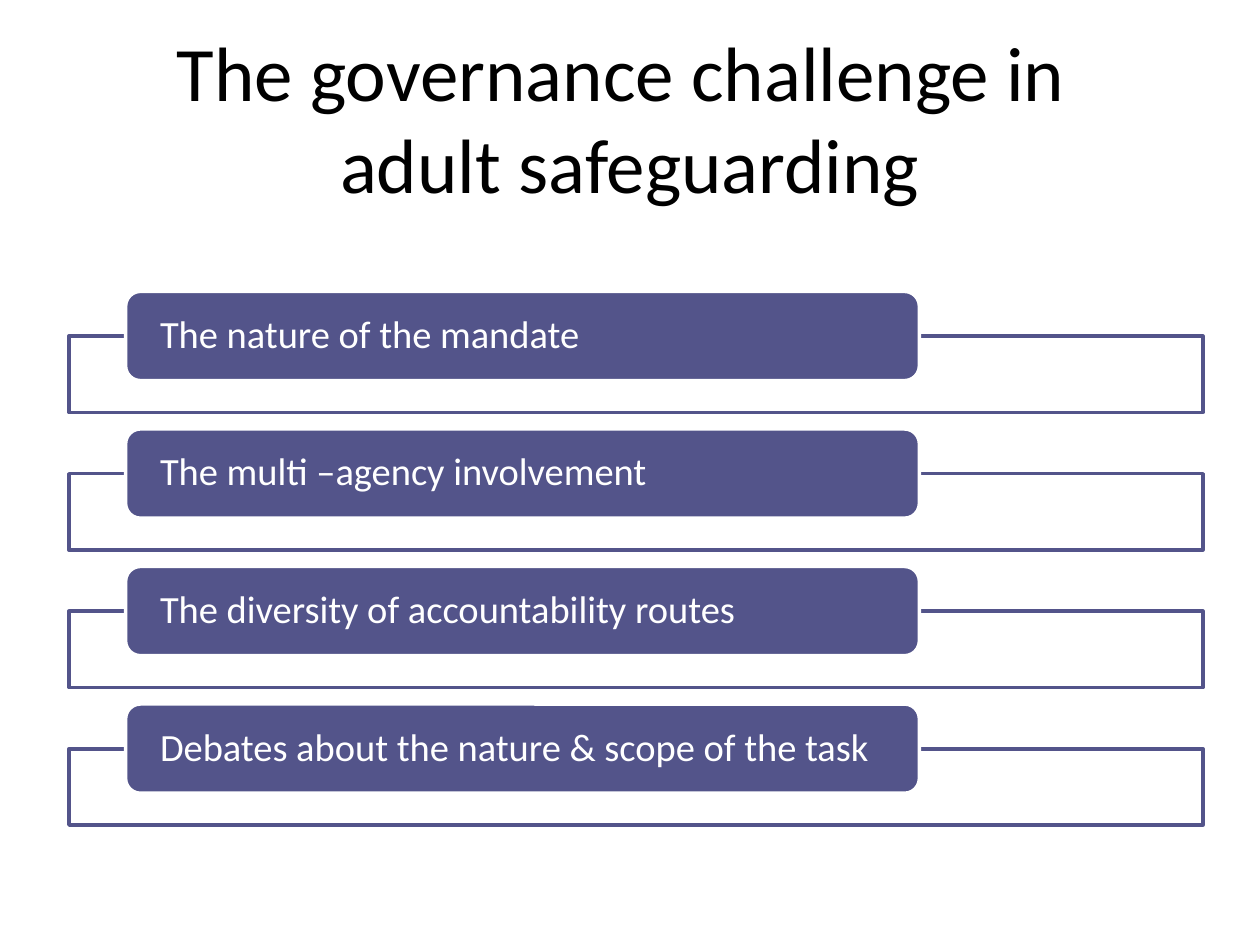
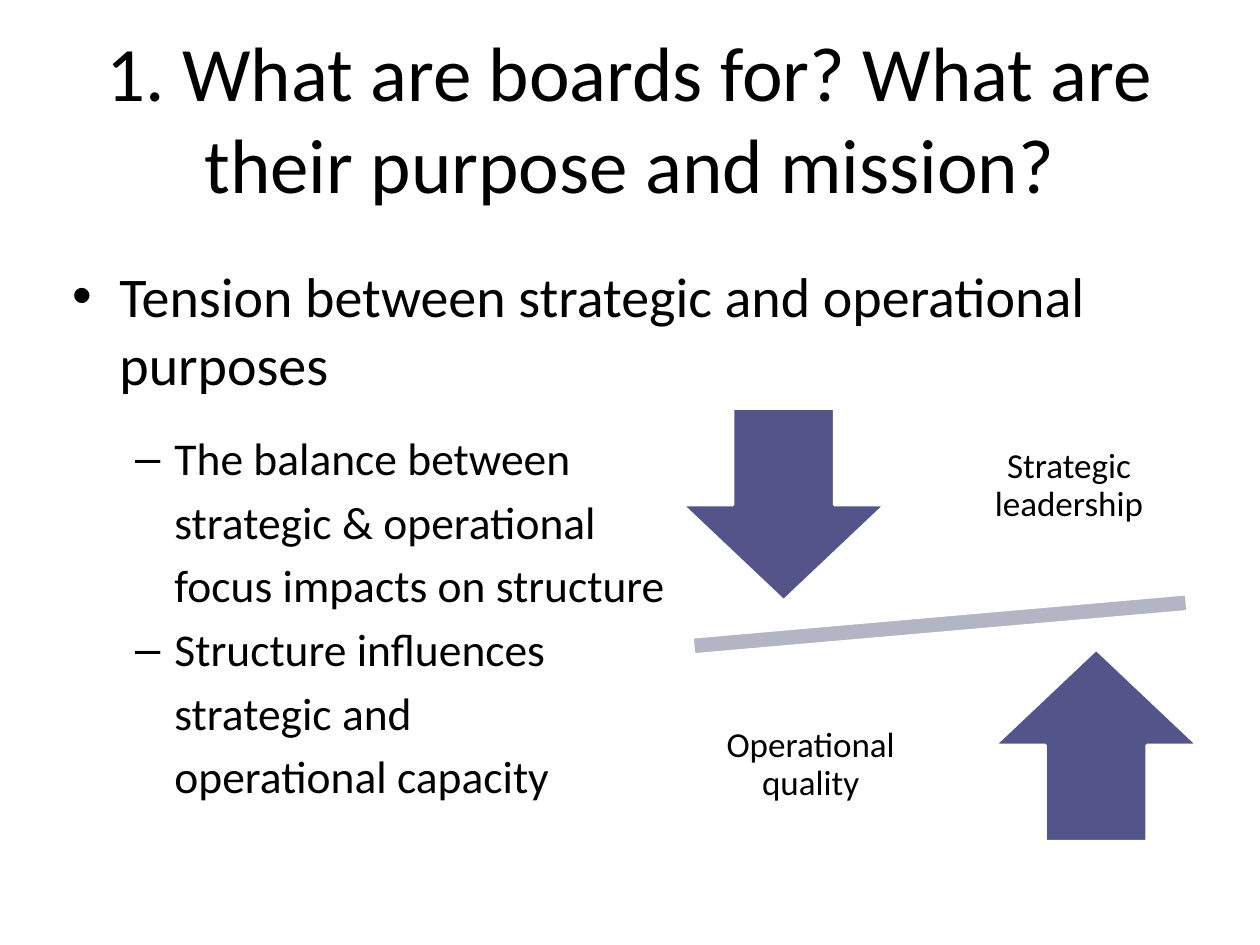
from pptx import Presentation
from pptx.dml.color import RGBColor
from pptx.enum.shapes import MSO_SHAPE as SHAPE
from pptx.enum.text import MSO_ANCHOR as ANCHOR, MSO_AUTO_SIZE as AUTO, PP_ALIGN as ALIGN
from pptx.util import Pt
from lxml.etree import SubElement
from pptx.oxml.ns import qn

INDIGO, GREY, WHITE, BLACK = "53548A", "B3B4C4", "FFFFFF", "000000"


def add_shape(slide, kind, box, fill, line):
    sp = slide.shapes.add_shape(kind, *map(Pt, box))
    sp.shadow.inherit = False
    sp.fill.solid()
    sp.fill.fore_color.rgb = RGBColor.from_string(fill)
    sp.line.color.rgb = RGBColor.from_string(line)
    sp.line.width = Pt(2)
    return sp


def style(p, size, color, align, spacing=None):
    p.alignment = align
    p.line_spacing = spacing
    for r in p.runs:
        r.font.name = "Calibri"
        r.font.size = Pt(size)
        r.font.color.rgb = RGBColor.from_string(color)


prs = Presentation()
prs.slide_width, prs.slide_height = Pt(720), Pt(540)

titles = [
    (5, "The governance challenge in \vadult safeguarding"),
    (1, "1. What are boards for? What are their purpose and mission?"),
]
for layout, text in titles:
    s = prs.slides.add_slide(prs.slide_layouts[layout])
    title = s.shapes.title
    title.left, title.top, title.width, title.height = map(Pt, (36, 21.6, 648, 90))
    title.text_frame.text = text
    title.text_frame.auto_size = AUTO.NONE
    style(title.text_frame.paragraphs[0], 44, BLACK, ALIGN.CENTER)
challenge, boards = prs.slides

challenges = [
    "The nature of the mandate",
    "The multi –agency involvement",
    "The diversity of accountability routes",
    "Debates about the nature & scope of the task",
]
for i, text in enumerate(challenges):
    top = 166.5 + 78.6 * i
    add_shape(challenge, SHAPE.RECTANGLE, (39.4, top + 25.6, 648, 43.6), WHITE, INDIGO)
    sp = add_shape(challenge, SHAPE.ROUNDED_RECTANGLE, (71.8, top, 453.6, 51), INDIGO, WHITE)
    tf = sp.text_frame
    tf.word_wrap = True
    tf.vertical_anchor = ANCHOR.MIDDLE
    tf.margin_left = tf.margin_right = Pt(17.2)
    tf.margin_top = tf.margin_bottom = 0
    tf.text = text
    style(tf.paragraphs[0], 22, WHITE, ALIGN.LEFT, 0.9)

body = boards.placeholders[1]
body.left, body.top, body.width, body.height = map(Pt, (34, 146, 648, 356.4))
tf = body.text_frame
tf.auto_size = AUTO.NONE
tf.text = "Tension between strategic and operational purposes"
style(tf.paragraphs[0], 32, BLACK, ALIGN.LEFT)
points = [
    ["The balance between", "strategic & operational", "focus impacts on structure"],
    ["Structure influences", "strategic and", "operational capacity"],
]
for point in points:
    for i, text in enumerate(point):
        p = tf.add_paragraph()
        p.text = text
        p.level = 1
        style(p, 26, BLACK, ALIGN.LEFT)
        if i:
            pPr = p._p.get_or_add_pPr()
            pPr.set("indent", "0")
            SubElement(pPr, qn("a:buNone"))
tf.paragraphs[1].space_before = Pt(19.4)

balance = add_shape(boards, SHAPE.MATH_MINUS, (344.2, 334.8, 386, 44), GREY, WHITE)
balance.rotation = 355
add_shape(boards, SHAPE.DOWN_ARROW, (389.5, 233.3, 116.6, 110.2), INDIGO, WHITE)
add_shape(boards, SHAPE.UP_ARROW, (568.1, 370.8, 116.6, 110.2), INDIGO, WHITE)

sides = [("Strategic leadership", 548.6, 219.6), ("Operational quality", 401, 379.4)]
for text, left, top in sides:
    tf = boards.shapes.add_textbox(Pt(left), Pt(top), Pt(124.6), Pt(116)).text_frame
    tf.word_wrap = True
    tf.vertical_anchor = ANCHOR.MIDDLE
    tf.margin_left = tf.margin_right = tf.margin_top = tf.margin_bottom = Pt(11.5)
    tf.text = text
    style(tf.paragraphs[0], 20, BLACK, ALIGN.CENTER, 0.9)

prs.save("out.pptx")
